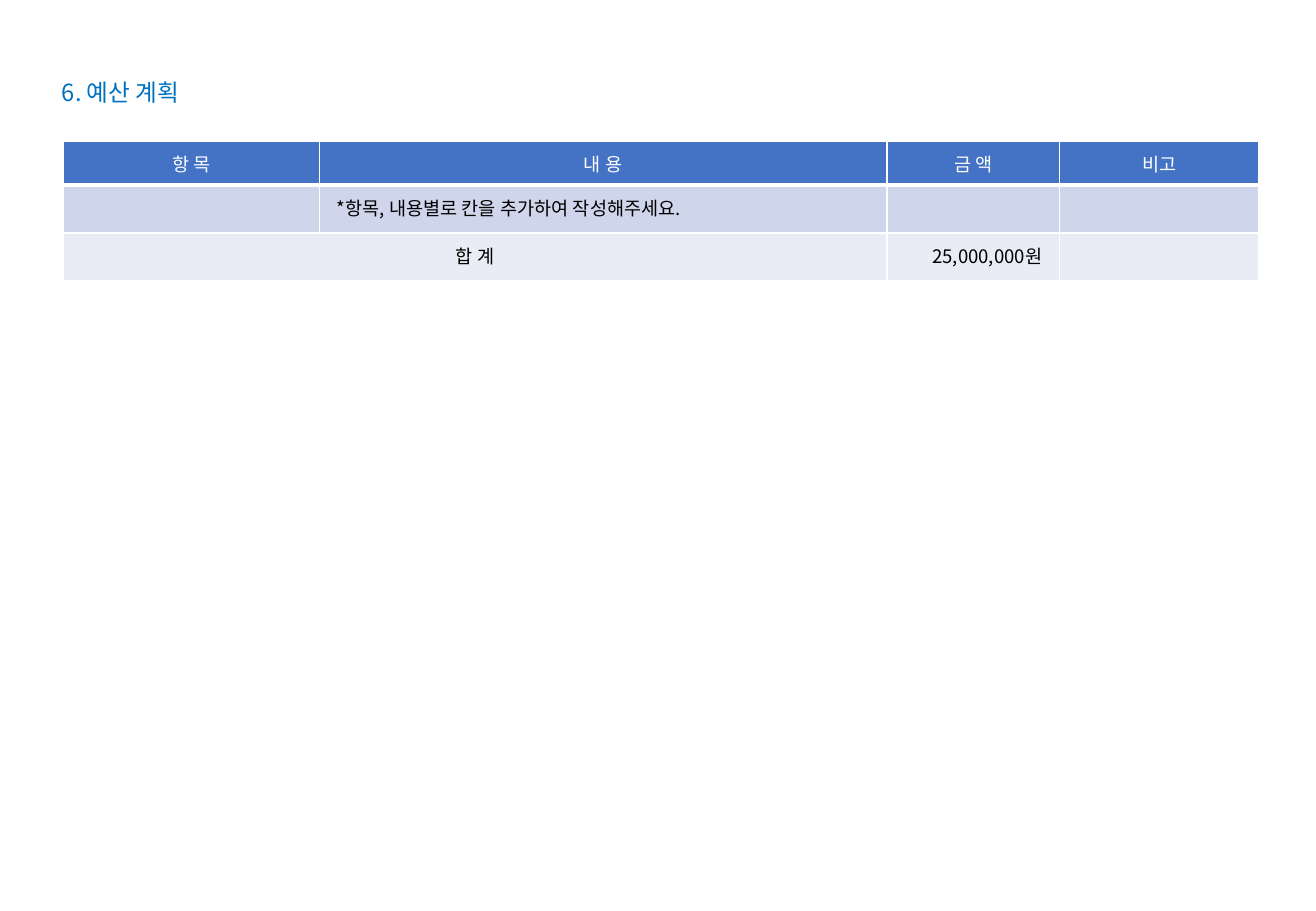
from lxml import etree
from pptx import Presentation
from pptx.dml.color import RGBColor
from pptx.enum.text import MSO_ANCHOR, PP_ALIGN
from pptx.oxml.ns import qn
from pptx.util import Cm, Pt

LEFT, MID, RIGHT = PP_ALIGN.LEFT, PP_ALIGN.CENTER, PP_ALIGN.RIGHT
CENTER = MSO_ANCHOR.MIDDLE
FONT = "Noto Sans CJK KR"
SIZE = 11
COLORS = {"title": "0070C0", "head": "4472C4", "body": "CFD5EA",
          "total": "E9EBF5", "text": "000000", "white": "FFFFFF"}

TITLE = "6. 예산 계획"
# Each row: fill, text colour, bottom border width, height in cm, cells
ROWS = [
    ("head", "white", 3, 0.87,
     [("항 목", MID), ("내 용", MID), ("금 액", MID), ("비고", MID)]),
    ("body", "text", 1, 1,
     [("", LEFT), ("*항목, 내용별로 칸을 추가하여 작성해주세요.", LEFT),
      ("", LEFT), ("", LEFT)]),
    ("total", "text", 1, 1,
     [("합 계", MID), ("", LEFT), ("25,000,000원", RIGHT), ("", LEFT)]),
]
WIDTHS = [5.36, 11.86, 3.61, 4.17]


def rgb(name):
    return RGBColor.from_string(COLORS[name])


def write(para, text, size, color, align):
    para.alignment = align
    if not text:
        etree.SubElement(para._p, qn("a:endParaRPr"), sz=str(size * 100))
        return
    run = para.add_run()
    run.text = text
    font = run.font
    font.name, font.size, font.bold = FONT, Pt(size), False
    font.color.rgb = rgb(color)
    latin = font._element.find(qn("a:latin"))
    east = etree.Element(qn("a:ea"), typeface=FONT)
    latin.addnext(east)


def border(cell, top, bottom):
    props = cell._tc.get_or_add_tcPr()
    for side, width in (("L", 1), ("R", 1), ("T", top), ("B", bottom)):
        line = etree.SubElement(props, qn("a:ln" + side), w=str(Pt(width)))
        fill = etree.SubElement(line, qn("a:solidFill"))
        etree.SubElement(fill, qn("a:srgbClr"), val=COLORS["white"])


def add_title(slide):
    title = slide.shapes.title
    title.left, title.top = Cm(1.04), Cm(1.32)
    title.width, title.height = Cm(26.01), Cm(1.27)
    frame = title.text_frame
    frame.vertical_anchor = CENTER
    para = frame.paragraphs[0]
    para.line_spacing = 0.9
    write(para, TITLE, 14, "title", LEFT)


def add_budget(slide):
    high = sum(row[3] for row in ROWS)
    table = slide.shapes.add_table(
        len(ROWS), len(WIDTHS), Cm(1.32), Cm(2.95),
        Cm(sum(WIDTHS)), Cm(high)).table
    for col, width in zip(table.columns, WIDTHS):
        col.width = Cm(width)
    top = 1
    for r, (fill, color, bottom, height, cells) in enumerate(ROWS):
        table.rows[r].height = Cm(height)
        for c, (text, align) in enumerate(cells):
            cell = table.cell(r, c)
            cell.margin_left = cell.margin_right = Cm(0.36)
            cell.margin_top = cell.margin_bottom = Cm(0.18)
            border(cell, top, bottom)
            cell.fill.solid()
            cell.fill.fore_color.rgb = rgb(fill)
            write(cell.text_frame.paragraphs[0], text, SIZE, color, align)
        top = bottom
    table.cell(2, 0).merge(table.cell(2, 1))


def main():
    deck = Presentation()
    deck.slide_width, deck.slide_height = Cm(27.51), Cm(19.05)
    slide = deck.slides.add_slide(deck.slide_layouts[5])
    add_title(slide)
    add_budget(slide)
    deck.save("out.pptx")


if __name__ == "__main__":
    main()
